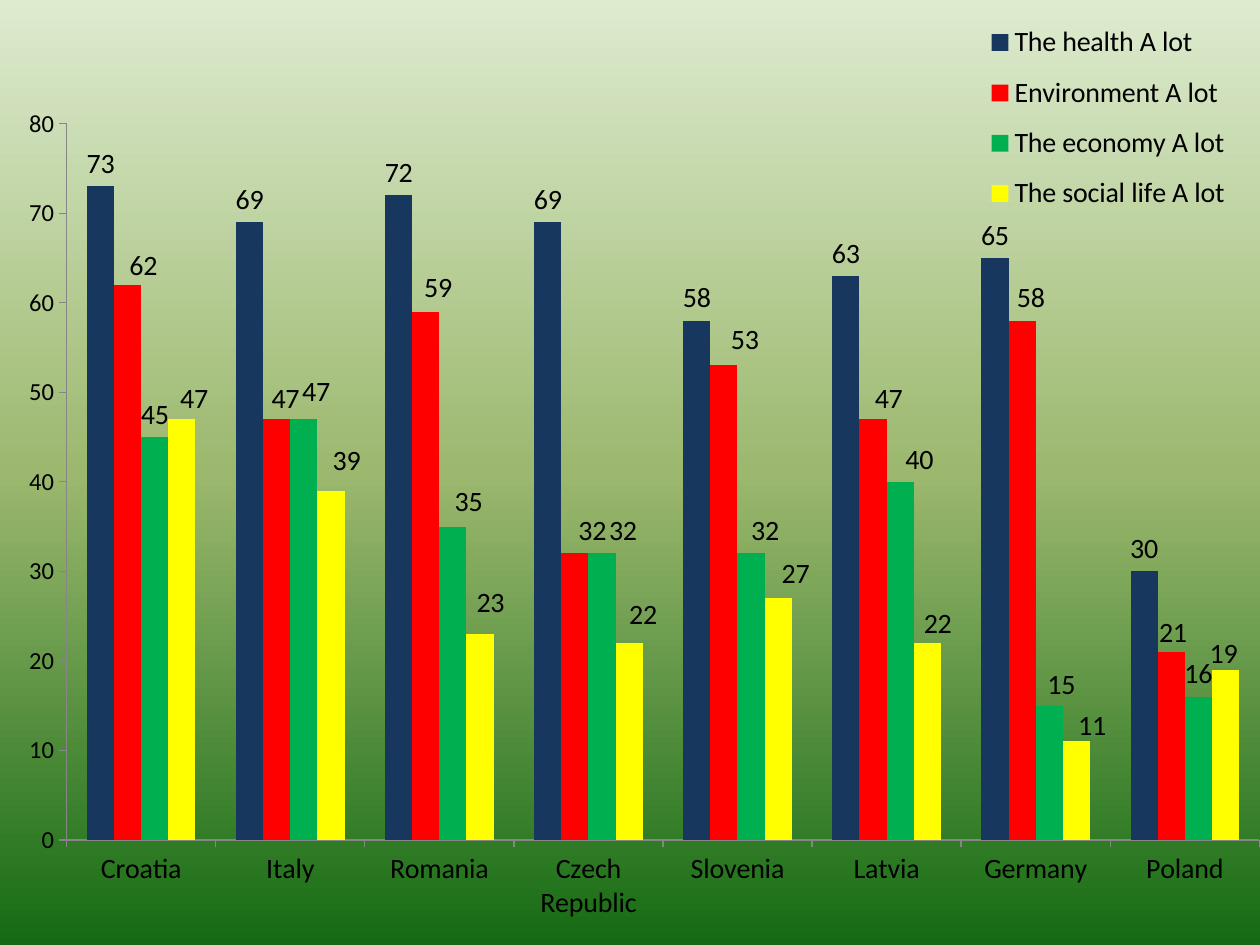
from copy import deepcopy
from typing import NamedTuple

from lxml import etree
from pptx import Presentation
from pptx.chart.data import CategoryChartData
from pptx.dml.color import RGBColor
from pptx.enum.chart import (XL_CHART_TYPE, XL_LABEL_POSITION,
                             XL_LEGEND_POSITION, XL_TICK_MARK)
from pptx.oxml.ns import qn
from pptx.util import Cm, Pt

COLUMNS = XL_CHART_TYPE.COLUMN_CLUSTERED
ABOVE = XL_LABEL_POSITION.OUTSIDE_END
RIGHT = XL_LEGEND_POSITION.RIGHT
CROSS, OUT = XL_TICK_MARK.CROSS, XL_TICK_MARK.OUTSIDE

BLACK = RGBColor(0x00, 0x00, 0x00)
GREY = RGBColor(0x86, 0x86, 0x86)
NAVY = RGBColor(0x17, 0x37, 0x5E)
RED = RGBColor(0xFF, 0x00, 0x00)
GREEN = RGBColor(0x00, 0xB0, 0x50)
YELLOW = RGBColor(0xFF, 0xFF, 0x00)
PALE = RGBColor(0xDD, 0xEB, 0xCF)
OLIVE = RGBColor(0x9C, 0xB8, 0x6E)
FOREST = RGBColor(0x15, 0x6B, 0x13)

FONT = "Calibri"
WIDE, HIGH = Cm(25.4), Cm(19.05)
LANDS = ["Croatia", "Italy", "Romania", "Czech Republic",
         "Slovenia", "Latvia", "Germany", "Poland"]


class Topic(NamedTuple):
    name: str
    color: RGBColor
    vals: list[int]
    shifts: list[tuple[int, int]]  # label offsets (right, down) in points


TOPICS = [
    Topic("The health A lot", NAVY, [73, 69, 72, 69, 58, 63, 65, 30], []),
    Topic("Environment A lot", RED, [62, 47, 59, 32, 53, 47, 58, 21],
          [(9, 2), (5, 1), (7, -1), (10, 0), (12, -2), (9, 1), (5, 0), (1, 2)]),
    Topic("The economy A lot", GREEN, [45, 47, 35, 32, 32, 40, 15, 16],
          [(0, 0), (7, -3), (9, -1), (12, 0), (8, 0), (11, 0), (7, 1), (0, 0)]),
    Topic("The social life A lot", YELLOW, [47, 39, 23, 22, 27, 22, 11, 19],
          [(7, 1), (9, -4), (6, -5), (8, -3), (10, -1), (6, 2), (9, 4), (-1, 4)]),
]


def set_font(font, size: int) -> None:
    font.name, font.size, font.bold = FONT, Pt(size), False
    font.color.rgb = BLACK


def lay_out(node, index: int, **parts) -> None:
    """Give a chart part a manual layout, as its child number index."""
    for old in node.findall(qn("c:layout")):
        node.remove(old)
    box = etree.Element(qn("c:layout"))
    manual = etree.SubElement(box, qn("c:manualLayout"))
    for key, val in parts.items():
        etree.SubElement(manual, qn(f"c:{key}")).set("val", str(val))
    node.insert(index, box)


def paint(slide) -> None:
    fill = slide.background.fill
    fill.gradient()
    fill.gradient_angle = 270
    first = next(slide.element.iter(qn("a:gs")))
    first.addnext(deepcopy(first))
    for stop, color, place in zip(fill.gradient_stops,
                                  (PALE, OLIVE, FOREST), (0, 0.5, 1)):
        stop.color.rgb, stop.position = color, place


def style_axis(axis, size: int, tick) -> None:
    axis.has_major_gridlines = False
    axis.major_tick_mark = tick
    axis.minor_tick_mark = XL_TICK_MARK.NONE
    axis.format.line.color.rgb = GREY
    axis.format.line.width = Pt(0.75)
    set_font(axis.tick_labels.font, size)


def style_row(row, topic: Topic) -> None:
    row.format.fill.solid()
    row.format.fill.fore_color.rgb = topic.color
    row.invert_if_negative = False
    labels = row.data_labels
    labels.show_value, labels.position = True, ABOVE
    set_font(labels.font, 16)
    for i, (right, down) in enumerate(topic.shifts):
        if (right, down) == (0, 0):
            continue
        label = row.points[i].data_label
        label.position = ABOVE
        set_font(label.font, 16)
        node = row._element.findall(".//" + qn("c:dLbl"))[-1]
        lay_out(node, 1, x=Pt(right) / WIDE, y=Pt(down) / HIGH)


def add_bars(slide) -> None:
    data = CategoryChartData()
    data.categories = LANDS
    for topic in TOPICS:
        data.add_series(topic.name, topic.vals)
    chart = slide.shapes.add_chart(COLUMNS, 0, 0, WIDE, HIGH, data).chart
    chart.has_title = False
    set_font(chart.font, 10)

    # Plot area and columns
    plot = chart.plots[0]
    plot.vary_by_categories = False
    plot.gap_width, plot.overlap = 150, 0
    area = chart._chartSpace.find(".//" + qn("c:plotArea"))
    lay_out(area, 0, layoutTarget="inner", xMode="edge", yMode="edge",
            x=0.053, y=0.131, w=0.947, h=0.758)
    for row, topic in zip(plot.series, TOPICS):
        style_row(row, topic)

    # Axes
    style_axis(chart.category_axis, 16, OUT)
    style_axis(chart.value_axis, 14, CROSS)
    scale = chart.value_axis
    scale.minimum_scale, scale.maximum_scale, scale.major_unit = 0, 80, 10
    scale.major_tick_mark = OUT

    # Legend
    chart.has_legend = True
    legend = chart.legend
    legend.position = RIGHT
    legend.include_in_layout = True
    set_font(legend.font, 16)
    lay_out(legend._element, 1, xMode="edge", yMode="edge",
            x=0.78, y=0.01, w=0.2, h=0.23)


def main() -> None:
    deck = Presentation()
    deck.slide_width, deck.slide_height = WIDE, HIGH
    slide = deck.slides.add_slide(deck.slide_layouts[6])
    paint(slide)
    add_bars(slide)
    deck.save("out.pptx")


if __name__ == "__main__":
    main()
